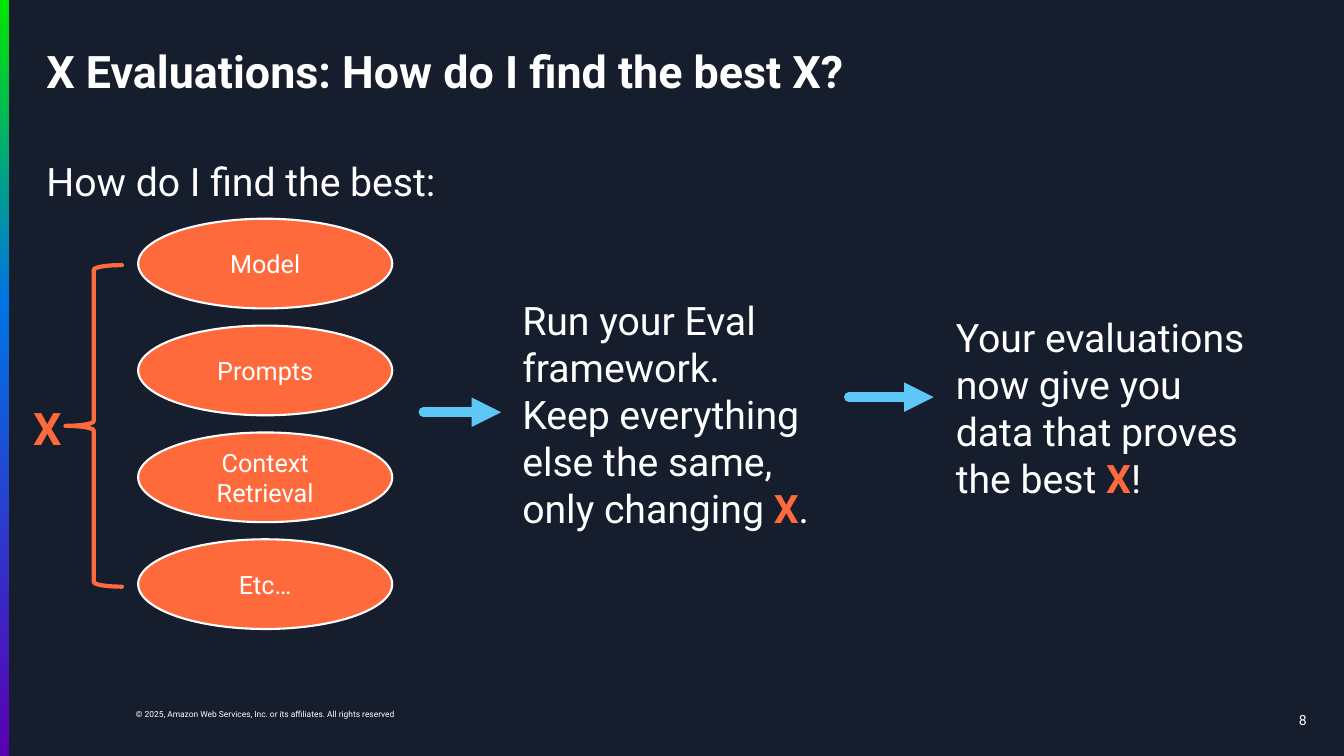
from lxml import etree
from pptx import Presentation
from pptx.dml.color import RGBColor
from pptx.enum import shapes as kinds, text as txt
from pptx.oxml.ns import qn
from pptx.util import Inches, Pt

WHITE, ORANGE, BLUE = "FFFFFF", "FF6A3D", "5DC8F8"


def color(code):
    return RGBColor.from_string(code)


def write(shape, size, runs, inset=(0, 0.05, 0, 0.05), bold=False):
    """Fill a shape with (text, colour) runs; orange runs are bold."""
    frame = shape.text_frame
    frame.word_wrap = True
    (frame.margin_left, frame.margin_top,
     frame.margin_right, frame.margin_bottom) = map(Inches, inset)
    line = frame.paragraphs[0]
    for words, code in runs:
        if words == "\n":
            line.add_line_break()
            continue
        run = line.add_run()
        run.text = words
        run.font.name = "Roboto"
        run.font.size = Pt(size)
        run.font.bold = bold or code == ORANGE
        run.font.color.rgb = color(code)
    return frame


deck = Presentation()
deck.slide_width, deck.slide_height = Inches(13.33), Inches(7.5)
slide = deck.slides.add_slide(deck.slide_layouts[6])
slide.background.fill.solid()
slide.background.fill.fore_color.rgb = color("161E2D")
items = slide.shapes

# Side stripe with a three-colour gradient running down
stripe = items.add_shape(kinds.MSO_SHAPE.RECTANGLE, 0, 0, Inches(0.09), Inches(7.5))
stripe.shadow.inherit = False
stripe.line.fill.background()
stripe.fill.gradient()
stripe.fill.gradient_angle = 270
stops = stripe._element.spPr.find(".//" + qn("a:gsLst"))
for stop in list(stops):
    stops.remove(stop)
for place, code in (0, "00E500"), (40, "0073E5"), (100, "5900B2"):
    stop = etree.SubElement(stops, qn("a:gs"), pos=str(place * 1000))
    etree.SubElement(stop, qn("a:srgbClr"), val=code)

# Footer
note = items.add_textbox(Inches(1.25), Inches(6.99), Inches(2.85), Inches(0.2))
frame = write(note, 6, [("© 2025, Amazon Web Services, Inc. or its affiliates. "
                         "All rights reserved", WHITE)], (0.1, 0.05, 0.1, 0.05))
frame.word_wrap = False
number = items.add_textbox(Inches(9.96), Inches(6.94), Inches(3), Inches(0.4))
frame = write(number, 10, [("8", WHITE)], (0, 0, 0, 0))
frame.vertical_anchor = txt.MSO_ANCHOR.MIDDLE
frame.paragraphs[0].alignment = txt.PP_ALIGN.RIGHT

# Title and the X label
for left, top, width, words, code in (
        (0.46, 0.39, 12.5, "X Evaluations: How do I find the best X?", WHITE),
        (0.33, 3.94, 0.36, "X", ORANGE)):
    box = items.add_textbox(Inches(left), Inches(top), Inches(width), Inches(0.7))
    frame = write(box, 32, [(words, code)], (0, 0.1, 0, 0.05), bold=True)
    frame.paragraphs[0].line_spacing = 0.9

# Question and the two steps
for left, top, width, height, runs in (
        (0.46, 1.51, 4.05, 0.57, [("How do I find the best:", WHITE)]),
        (5.18, 2.89, 3.02, 2.46, [
            ("Run your Eval framework.", WHITE), ("\n", WHITE),
            ("Keep everything else the same, only changing ", WHITE),
            ("X", ORANGE), (".", WHITE)]),
        (9.48, 3.06, 3.02, 1.99, [
            ("Your evaluations now give you data that proves the best ", WHITE),
            ("X", ORANGE), ("!", WHITE)])):
    box = items.add_textbox(Inches(left), Inches(top), Inches(width), Inches(height))
    write(box, 28, runs)

# Choices held by the brace
for row, name in enumerate(("Model", "Prompts", "Context Retrieval", "Etc…")):
    oval = items.add_shape(kinds.MSO_SHAPE.OVAL, Inches(1.37),
                           Inches(2.17 + 1.06 * row), Inches(2.52), Inches(0.89))
    oval.shadow.inherit = False
    oval.fill.solid()
    oval.fill.fore_color.rgb = color(ORANGE)
    oval.line.color.rgb = color(WHITE)
    oval.line.width = Pt(1.5)
    frame = write(oval, 18, [(name, WHITE)], (0.1, 0.05, 0.1, 0.05))
    frame.vertical_anchor = txt.MSO_ANCHOR.MIDDLE
    frame.paragraphs[0].alignment = txt.PP_ALIGN.CENTER

brace = items.add_shape(kinds.MSO_SHAPE.LEFT_BRACE, Inches(0.65), Inches(2.63),
                        Inches(0.56), Inches(3.19))
brace.shadow.inherit = False
brace.fill.background()
brace.line.color.rgb = color(ORANGE)
brace.line.width = Pt(3)
brace.line._get_or_add_ln().set("cap", "rnd")

# Arrows between the steps
for start, end, level in (4.2, 4.97, 4.09), (8.42, 9.26, 3.94):
    arrow = items.add_connector(kinds.MSO_CONNECTOR.STRAIGHT, Inches(start),
                                Inches(level), Inches(end), Inches(level))
    arrow.line.color.rgb = color(BLUE)
    arrow.line.width = Pt(7)
    stroke = arrow.line._get_or_add_ln()
    stroke.set("cap", "rnd")
    etree.SubElement(stroke, qn("a:tailEnd"), type="triangle")
    etree.SubElement(arrow._element.spPr, qn("a:effectLst"))

deck.save("out.pptx")
